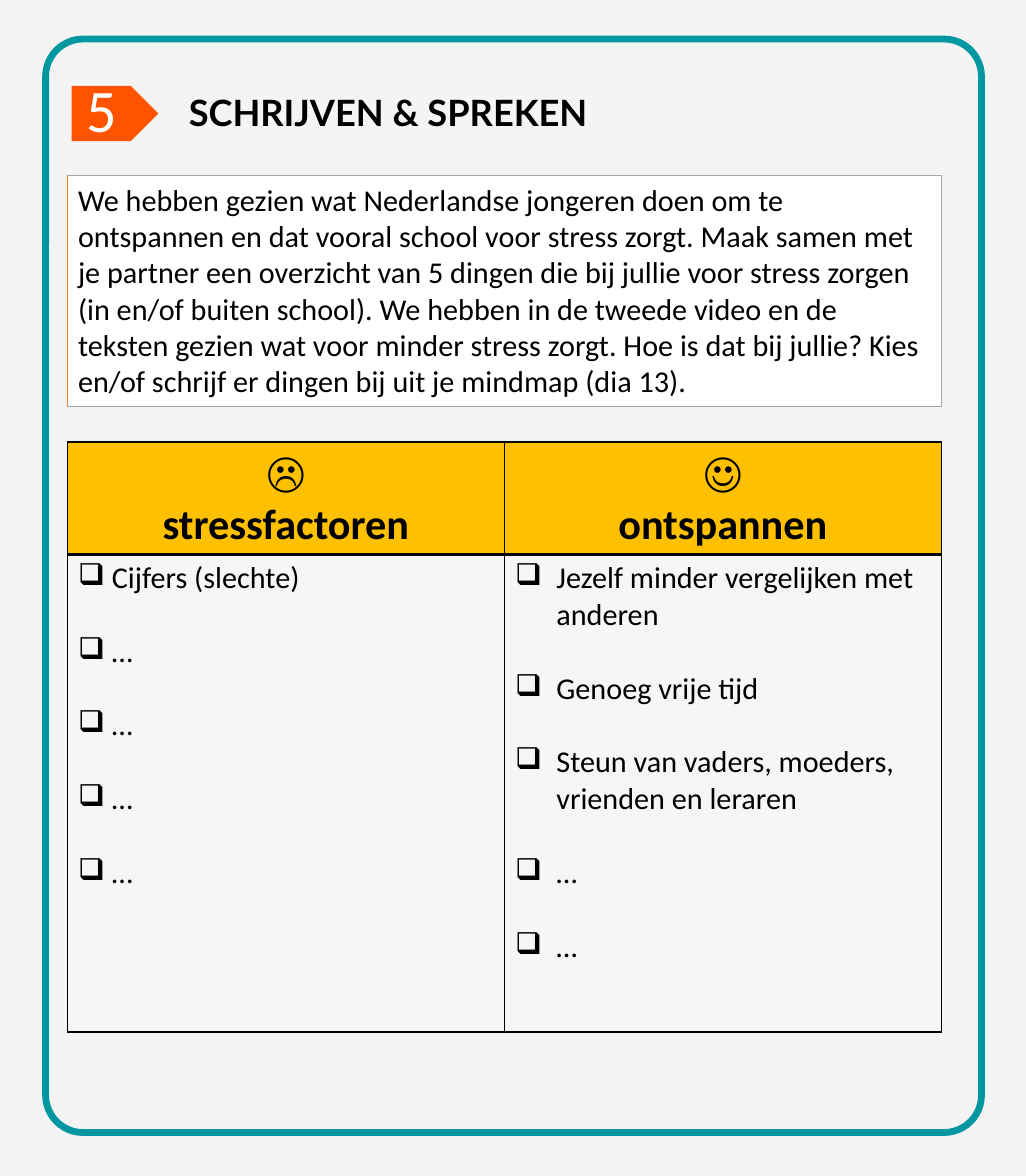
import dataclasses

import lxml.etree
import pptx
import pptx.dml.color
import pptx.enum.shapes
import pptx.enum.text
import pptx.oxml.ns
import pptx.util

Inches = pptx.util.Inches
Pt = pptx.util.Pt
Shape = pptx.enum.shapes.MSO_SHAPE
Align = pptx.enum.text.PP_ALIGN
Anchor = pptx.enum.text.MSO_ANCHOR
qn = pptx.oxml.ns.qn


@dataclasses.dataclass
class Theme:
    back: str = "F4F4F4"
    teal: str = "0097A1"
    flame: str = "FF5300"
    rust: str = "ED7D31"
    gold: str = "FFC000"
    grey: str = "A5A5A5"
    white: str = "FFFFFF"
    black: str = "000000"
    font: str = "Calibri"
    title_font: str = "Lato"
    body: int = 20
    title: int = 24
    head: int = 28
    badge: int = 40
    gap: float = 24.4


def color(code):
    return pptx.dml.color.RGBColor.from_string(code)


def write(frame, text, size, font, ink, bold=False, align=Align.LEFT,
          bullet=None, indent=0, after=0):
    """Fill a text frame, one paragraph per line of text."""
    frame.text = text
    for para in frame.paragraphs:
        para.alignment = align
        para.space_after = Pt(after)
        para.font.size, para.font.name, para.font.bold = Pt(size), font, bold
        para.font.color.rgb = color(ink)
        for run in para.runs:
            run.font.size, run.font.name, run.font.bold = Pt(size), font, bold
            run.font.color.rgb = color(ink)
        if bullet:
            props = para._p.get_or_add_pPr()
            props.set("marL", str(Inches(indent)))
            props.set("indent", str(-Inches(indent)))
            mark = lxml.etree.Element(qn("a:buChar"), char=bullet)
            props.insert_element_before(mark, "a:tabLst", "a:defRPr", "a:extLst")


class Page:
    def __init__(self, deck, theme):
        self.theme = theme
        self.slide = deck.slides.add_slide(deck.slide_layouts[6])
        fill = self.slide.background.fill
        fill.solid()
        fill.fore_color.rgb = color(theme.back)

    def shape(self, kind, box, fill=None, line=None, width=1):
        item = self.slide.shapes.add_shape(kind, *map(Inches, box))
        item.shadow.inherit = False
        if fill:
            item.fill.solid()
            item.fill.fore_color.rgb = color(fill)
        else:
            item.fill.background()
        if line:
            item.line.color.rgb = color(line)
            item.line.width = Pt(width)
        else:
            item.line.fill.background()
        return item

    def label(self, box, text, wrap=True, **style):
        frame = self.slide.shapes.add_textbox(*map(Inches, box)).text_frame
        frame.word_wrap = wrap
        write(frame, text, **style)

    def line(self, start, end, ink, width):
        kind = pptx.enum.shapes.MSO_CONNECTOR.STRAIGHT
        edge = self.slide.shapes.add_connector(kind, *map(Inches, start + end))
        edge.line.color.rgb = color(ink)
        edge.line.width = Pt(width)
        lxml.etree.SubElement(edge._element.spPr, qn("a:effectLst"))

    def table(self, box, rows, cols):
        left, top, width, _ = box
        grid = self.slide.shapes.add_table(
            len(rows), cols, *map(Inches, box)).table
        for row, height in zip(grid.rows, rows):
            row.height = Inches(height)
        for col in grid.columns:
            col.width = Inches(width / cols)
        return grid

    def cell(self, cell, text, fill, sides, alpha=None, **style):
        write(cell.text_frame, text, **style)
        props = cell._tc.get_or_add_tcPr()
        for side, width in zip("LRTB", sides):
            edge = lxml.etree.SubElement(
                props, qn(f"a:ln{side}"), w=str(Pt(width)))
            paint = lxml.etree.SubElement(edge, qn("a:solidFill"))
            lxml.etree.SubElement(paint, qn("a:srgbClr"), val=self.theme.black)
        cell.fill.solid()
        cell.fill.fore_color.rgb = color(fill)
        if alpha is not None:
            tint = props.find(qn("a:solidFill")).find(qn("a:srgbClr"))
            lxml.etree.SubElement(tint, qn("a:alpha"), val=str(alpha * 1000))


TASK = (
    "We hebben gezien wat Nederlandse jongeren doen om te ontspannen en dat "
    "vooral school voor stress zorgt. Maak samen met je partner een overzicht "
    "van 5 dingen die bij jullie voor stress zorgen (in en/of buiten school). "
    "We hebben in de tweede video en de teksten gezien wat voor minder stress "
    "zorgt. Hoe is dat bij jullie? Kies en/of schrijf er dingen bij uit je "
    "mindmap (dia 13).")

# Heading, bullet indent and points of each column
LISTS = [
    ("☹\nstressfactoren", 0.31, ["Cijfers (slechte)", "…", "…", "…", "…"]),
    ("☺\nontspannen", 0.38, [
        "Jezelf minder vergelijken met anderen", "Genoeg vrije tijd",
        "Steun van vaders, moeders, vrienden en leraren", "…", "…"]),
]


def main():
    deck = pptx.Presentation()
    deck.slide_width, deck.slide_height = Inches(9.45), Inches(10.83)
    theme = Theme()
    page = Page(deck, theme)
    plain = dict(size=theme.body, font=theme.font, ink=theme.black)

    # Numbered badge, frame and title
    page.shape(Shape.PENTAGON, (0.66, 0.79, 0.8, 0.51), fill=theme.flame)
    page.label((0.7, 0.62, 0.42, 0.77), "5", wrap=False, size=theme.badge,
               font=theme.font, ink=theme.white)
    frame = page.shape(Shape.ROUNDED_RECTANGLE, (0.42, 0.36, 8.62, 10.07),
                       line=theme.teal, width=4.5)
    frame.adjustments[0] = 0.04
    page.label((1.64, 0.78, 7.19, 0.5), "SCHRIJVEN & SPREKEN",
               size=theme.title, font=theme.title_font, ink=theme.black,
               bold=True)

    # Task box with its accent edge
    left, top, width, height = 0.62, 1.62, 8.05, 2.12
    task = page.shape(Shape.RECTANGLE, (left, top, width, height),
                      fill=theme.white, line=theme.grey, width=0.75)
    task.text_frame.word_wrap = True
    task.text_frame.vertical_anchor = Anchor.TOP
    write(task.text_frame, TASK, **plain)
    page.line((left, top), (left, top + height), theme.rust, 1)

    # Two lists side by side
    rows = (1.02, 4.4)
    grid = page.table((left, 4.07, width, sum(rows)), rows, len(LISTS))
    for col, (head, indent, points) in enumerate(LISTS):
        page.cell(grid.cell(0, col), head, theme.gold, (1, 1, 1, 2),
                  size=theme.head, font=theme.font, ink=theme.black,
                  bold=True, align=Align.CENTER)
        page.cell(grid.cell(1, col), "\n".join(points), theme.white,
                  (1, 1, 2, 1), alpha=20, bullet="❑", indent=indent,
                  after=theme.gap, **plain)

    deck.save("out.pptx")


if __name__ == "__main__":
    main()
